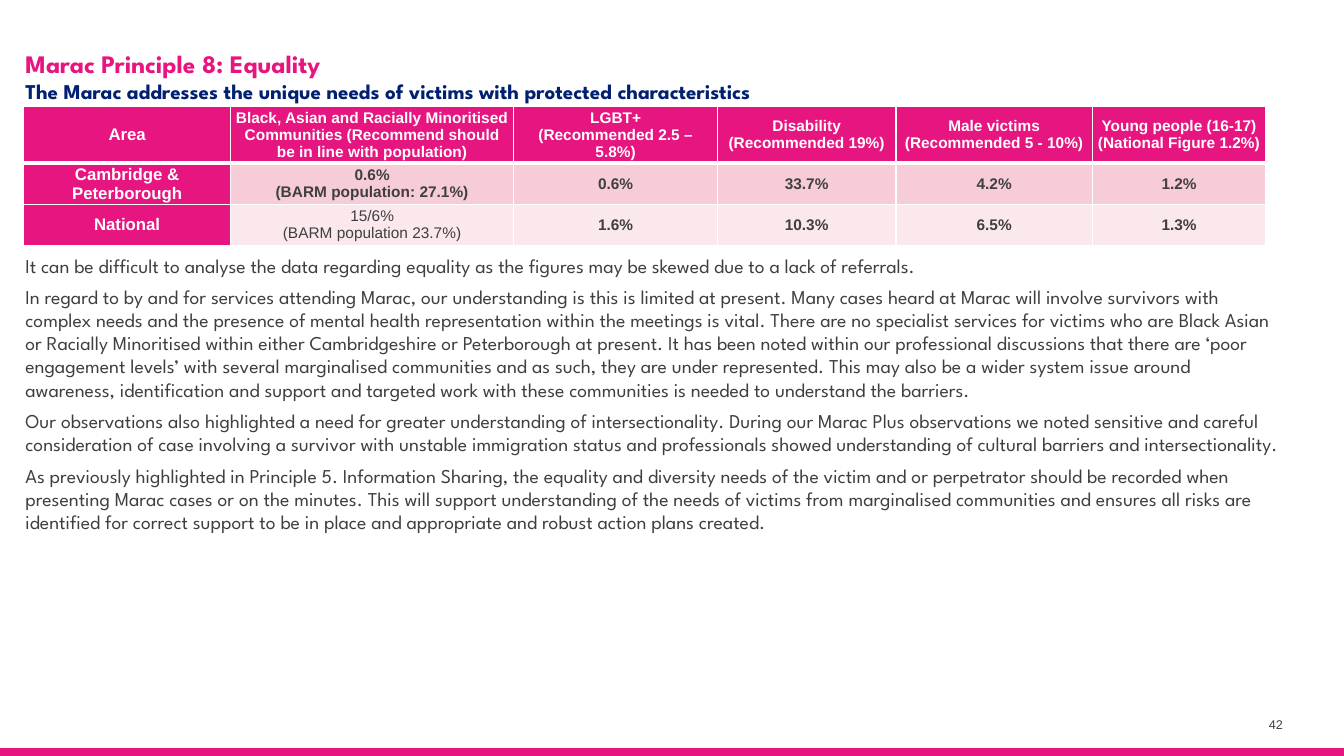
from lxml import etree
from pptx import Presentation
from pptx.dml.color import RGBColor
from pptx.enum.shapes import MSO_SHAPE
from pptx.enum.text import MSO_ANCHOR, PP_ALIGN
from pptx.oxml.ns import qn
from pptx.util import Cm, Pt

RECTANGLE = MSO_SHAPE.RECTANGLE
TOP, MIDDLE, BOTTOM = MSO_ANCHOR.TOP, MSO_ANCHOR.MIDDLE, MSO_ANCHOR.BOTTOM
LEFT, CENTER, RIGHT = PP_ALIGN.LEFT, PP_ALIGN.CENTER, PP_ALIGN.RIGHT
TITLE_ONLY = 5

PINK, NAVY, GREY, WHITE = "E71580", "002072", "3F3F3F", "FFFFFF"
ROW_FILLS = [PINK, "F6CCD8", "FAE8ED"]
SPARTAN, ARIAL = "League Spartan", "Arial"

COLUMN_WIDTHS = [5.21, 7.14, 5.13, 4.5, 4.95, 4.37]
ROW_HEIGHTS = [1.42, 1.04, 1.04]
TABLE_ROWS = [
    [
        "Area",
        "Black, Asian and Racially Minoritised Communities "
        "(Recommend should be in line with population)",
        "LGBT+\n(Recommended 2.5 – 5.8%)",
        "Disability\n(Recommended 19%)",
        "Male victims\n(Recommended 5 - 10%)",
        "Young people (16-17)\n(National Figure 1.2%)",
    ],
    ["Cambridge & Peterborough", "0.6%\n(BARM population: 27.1%)",
     "0.6%", "33.7%", "4.2%", "1.2%"],
    ["National", "15/6%\n(BARM population 23.7%)",
     "1.6%", "10.3%", "6.5%", "1.3%"],
]
FINDINGS = [
    "It can be difficult to analyse the data regarding equality as the figures "
    "may be skewed due to a lack of referrals.",
    "In regard to by and for services attending Marac, our understanding is this "
    "is limited at present. Many cases heard at Marac will involve survivors with "
    "complex needs and the presence of mental health representation within the "
    "meetings is vital. There are no specialist services for victims who are Black "
    "Asian or Racially Minoritised within either Cambridgeshire or Peterborough at "
    "present. It has been noted within our professional discussions that there are "
    "‘poor engagement levels’ with several marginalised communities and as such, "
    "they are under represented. This may also be a wider system issue around "
    "awareness, identification and support and targeted work with these communities "
    "is needed to understand the barriers.",
    "Our observations also highlighted a need for greater understanding of "
    "intersectionality. During our Marac Plus observations we noted sensitive and "
    "careful consideration of case involving a survivor with unstable immigration "
    "status and professionals showed understanding of cultural barriers and "
    "intersectionality.",
    "As previously highlighted in Principle 5. Information Sharing, the equality and "
    "diversity needs of the victim and or perpetrator should be recorded when "
    "presenting Marac cases or on the minutes. This will support understanding of "
    "the needs of victims from marginalised communities and ensures all risks are "
    "identified for correct support to be in place and appropriate and robust action "
    "plans created.",
]


def color(value):
    return RGBColor.from_string(value)


def set_values(target, values):
    for name, value in values.items():
        setattr(target, name, value)


def margins(side):
    return {"margin_left": Cm(side), "margin_right": Cm(side),
            "margin_top": 0, "margin_bottom": 0}


def add_span(para, text, size, font, ink, bold=False):
    span = para.add_run()
    span.text = text
    set_values(span.font, {"size": Pt(size), "name": font, "bold": bold})
    span.font.color.rgb = color(ink)


def write(frame, texts, para_values, **span_values):
    for index, text in enumerate(texts):
        para = frame.add_paragraph() if index else frame.paragraphs[0]
        set_values(para, para_values)
        add_span(para, text, **span_values)
    frame.paragraphs[0].space_before = Pt(0)


def add_text(page, left, top, width, height, texts, anchor, para_values, **span_values):
    box = page.shapes.add_textbox(Cm(left), Cm(top), Cm(width), Cm(height))
    set_values(box.text_frame,
               {"word_wrap": True, "vertical_anchor": anchor, **margins(0)})
    write(box.text_frame, texts, para_values, **span_values)


def add_title(page):
    title = page.shapes.title
    set_values(title, {"left": Cm(0.64), "top": Cm(1.19),
                       "width": Cm(30.78), "height": Cm(1.42)})
    set_values(title.text_frame,
               {"word_wrap": True, "vertical_anchor": BOTTOM, **margins(0)})
    para = title.text_frame.paragraphs[0]
    para.alignment = LEFT
    add_span(para, "Marac Principle 8: Equality", 18, SPARTAN, PINK, True)
    para.add_line_break()
    add_span(para, "The Marac addresses the unique needs of victims with "
             "protected characteristics", 15, SPARTAN, NAVY, True)


def add_border(cell, side, points):
    properties = cell._tc.get_or_add_tcPr()
    line = etree.SubElement(properties, qn(f"a:ln{side}"), w=str(Pt(points)))
    fill = etree.SubElement(line, qn("a:solidFill"))
    etree.SubElement(fill, qn("a:srgbClr"), val=WHITE)


def format_cell(cell, text, row, column):
    is_label = column == 0
    thick = {(0, "B"), (1, "T")}
    for side in "LRTB":
        add_border(cell, side, 3 if (row, side) in thick else 1)
    cell.fill.solid()
    cell.fill.fore_color.rgb = color(PINK if is_label else ROW_FILLS[row])
    set_values(cell, {"vertical_anchor": MIDDLE, **margins(0.1)})
    if is_label and row:
        set_values(cell, margins(0.03))
    write(cell.text_frame, text.split("\n"), {"alignment": CENTER},
          size=12 if is_label else 11, font=ARIAL,
          ink=WHITE if is_label or row == 0 else GREY,
          bold=(row, column) != (2, 1))


def add_equality_table(page):
    table = page.shapes.add_table(
        len(ROW_HEIGHTS), len(COLUMN_WIDTHS), Cm(0.6), Cm(2.69),
        Cm(sum(COLUMN_WIDTHS)), Cm(sum(ROW_HEIGHTS))).table
    set_values(table, {"first_row": False, "horz_banding": False})
    for column, width in enumerate(COLUMN_WIDTHS):
        table.columns[column].width = Cm(width)
    for row, texts in enumerate(TABLE_ROWS):
        table.rows[row].height = Cm(ROW_HEIGHTS[row])
        for column, text in enumerate(texts):
            format_cell(table.cell(row, column), text, row, column)


def add_footer_bar(page, width, height):
    thickness = Cm(0.2)
    bar = page.shapes.add_shape(RECTANGLE, 0, height - thickness, width, thickness)
    bar.shadow.inherit = False
    bar.fill.solid()
    bar.fill.fore_color.rgb = color(PINK)
    bar.line.fill.background()


def main():
    deck = Presentation()
    set_values(deck, {"slide_width": Cm(33.87), "slide_height": Cm(19.05)})
    page = deck.slides.add_slide(deck.slide_layouts[TITLE_ONLY])
    add_footer_bar(page, deck.slide_width, deck.slide_height)
    add_text(page, 31.42, 18.06, 0.91, 0.38, ["42"], BOTTOM,
             {"alignment": RIGHT}, size=9, font=ARIAL, ink=GREY)
    add_title(page)
    add_equality_table(page)
    add_text(page, 0.64, 6.4, 31.8, 11.58, FINDINGS, TOP,
             {"line_spacing": Pt(16.5), "space_before": Pt(3), "space_after": Pt(3)},
             size=14, font=SPARTAN, ink=GREY)
    deck.save("out.pptx")


if __name__ == "__main__":
    main()
